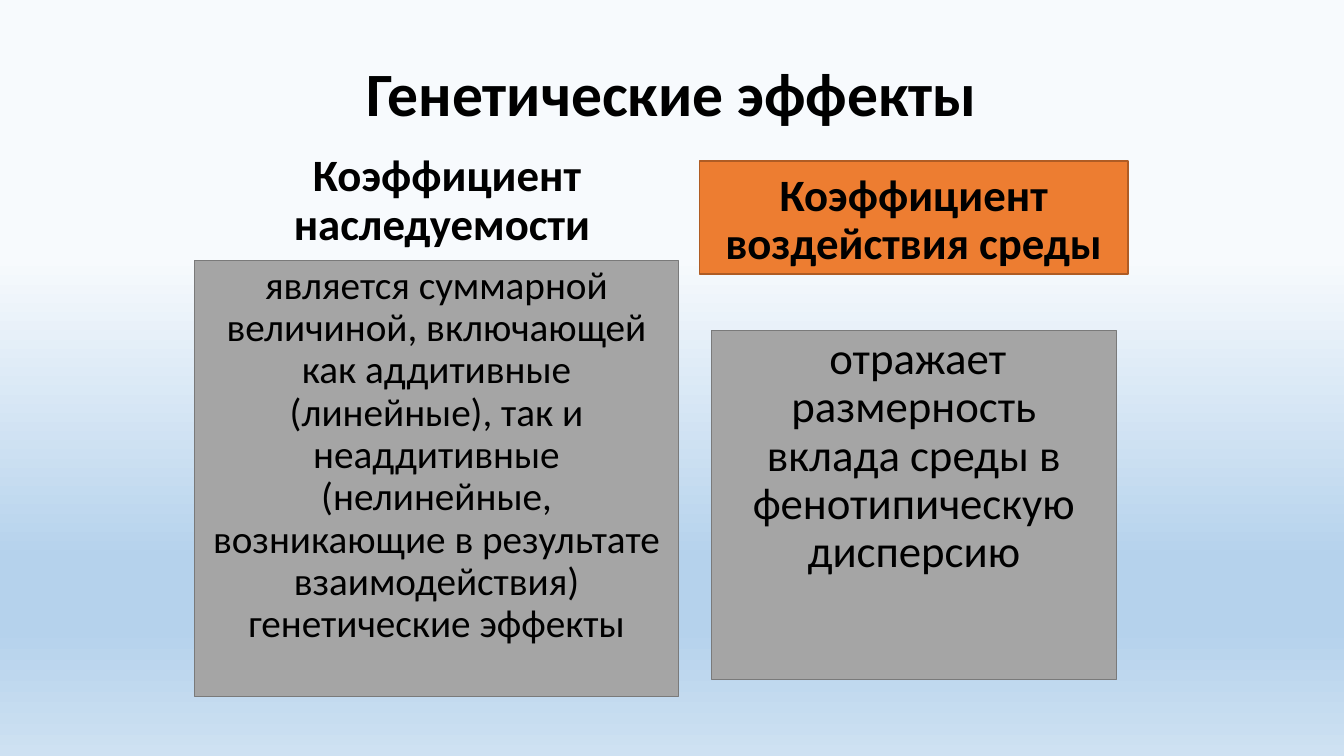
from lxml import etree
from pptx import Presentation
from pptx.dml.color import RGBColor
from pptx.enum.shapes import MSO_SHAPE
from pptx.enum.text import MSO_ANCHOR, PP_ALIGN
from pptx.oxml.ns import qn
from pptx.util import Cm, Pt

FONT = "Calibri"
COLORS = {
    "text": "000000",
    "panel": "A5A5A5",
    "panel_edge": "7A7A7A",
    "accent": "ED7D31",
    "accent_edge": "AF5C24",
}
# Background stops: position in percent, colour
SKY = [(34, "F7FAFD"), (74, "B5D2EC"), (83, "B5D2EC"), (100, "CEE1F2")]


def color(name):
    return RGBColor.from_string(COLORS[name])


def paint_background(slide):
    fill = slide.background.fill
    fill.gradient()
    fill.gradient_angle = 270  # counter-clockwise, so top to bottom
    stops = slide.element.find(".//" + qn("a:gsLst"))
    for stop in list(stops):
        stops.remove(stop)
    for percent, shade in SKY:
        stop = etree.SubElement(stops, qn("a:gs"), pos=str(percent * 1000))
        etree.SubElement(stop, qn("a:srgbClr"), val=shade)


def add_block(slide, box, runs, anchor=MSO_ANCHOR.TOP, bold=False,
              tint=None, space_before=10):
    """Centred text in a box (cm); tint names its fill and edge colours."""
    place = [Cm(length) for length in box]
    if tint:
        block = slide.shapes.add_shape(MSO_SHAPE.RECTANGLE, *place)
        block.shadow.inherit = False
        block.fill.solid()
        block.fill.fore_color.rgb = color(tint)
        block.line.color.rgb = color(tint + "_edge")
        block.line.width = Pt(1)
    else:
        block = slide.shapes.add_textbox(*place)
    frame = block.text_frame
    frame.word_wrap = True
    frame.vertical_anchor = anchor
    paragraph = frame.paragraphs[0]
    paragraph.alignment = PP_ALIGN.CENTER
    paragraph.line_spacing = 0.9
    paragraph.space_before = Pt(space_before)
    for words, size in runs:
        run = paragraph.add_run()
        run.text = words
        run.font.name = FONT
        run.font.size = Pt(size)
        run.font.bold = bold
        run.font.color.rgb = color("text")


def add_title(slide, box, words):
    add_block(slide, box, [(words, 44)], MSO_ANCHOR.MIDDLE, bold=True,
              space_before=0)


def add_column(slide, box, heading, heading_height, heading_tint,
               definition, definition_inset):
    """Heading at the top of the box; definition inset from its edges."""
    left, top, width, height = box
    inset_left, inset_top, inset_right = definition_inset
    definition_box = (left + inset_left, top + inset_top,
                      width - inset_left - inset_right, height - inset_top)
    add_block(slide, definition_box, definition, tint="panel")
    add_block(slide, (left, top, width, heading_height), [(heading, 32)],
              MSO_ANCHOR.BOTTOM, bold=True, tint=heading_tint)


def main():
    deck = Presentation()
    deck.slide_width, deck.slide_height = Cm(33.87), Cm(19.05)
    slide = deck.slides.add_slide(deck.slide_layouts[6])
    paint_background(slide)

    add_title(slide, (2.33, 1.01, 29.21, 2.84), "Генетические эффекты")

    # Heritability
    add_column(
        slide, (5.87, 3.96, 10.8, 13.59),
        "Коэффициент наследуемости ", 2.46, None,
        [("является суммарной величиной, включающей как аддитивные "
          "(линейные), так и неаддитивные (нелинейные, возникающие в "
          "результате взаимодействия) генетические эффекты", 28)],
        (-0.97, 2.6, -0.43))

    # Environment
    add_column(
        slide, (17.63, 4.06, 10.8, 13.06),
        "Коэффициент воздействия среды", 2.85, "accent",
        [(" ", 24),
         ("отражает размерность вклада среды в фенотипическую дисперсию",
          32)],
        (0.3, 4.27, 0.29))

    deck.save("out.pptx")


if __name__ == "__main__":
    main()
